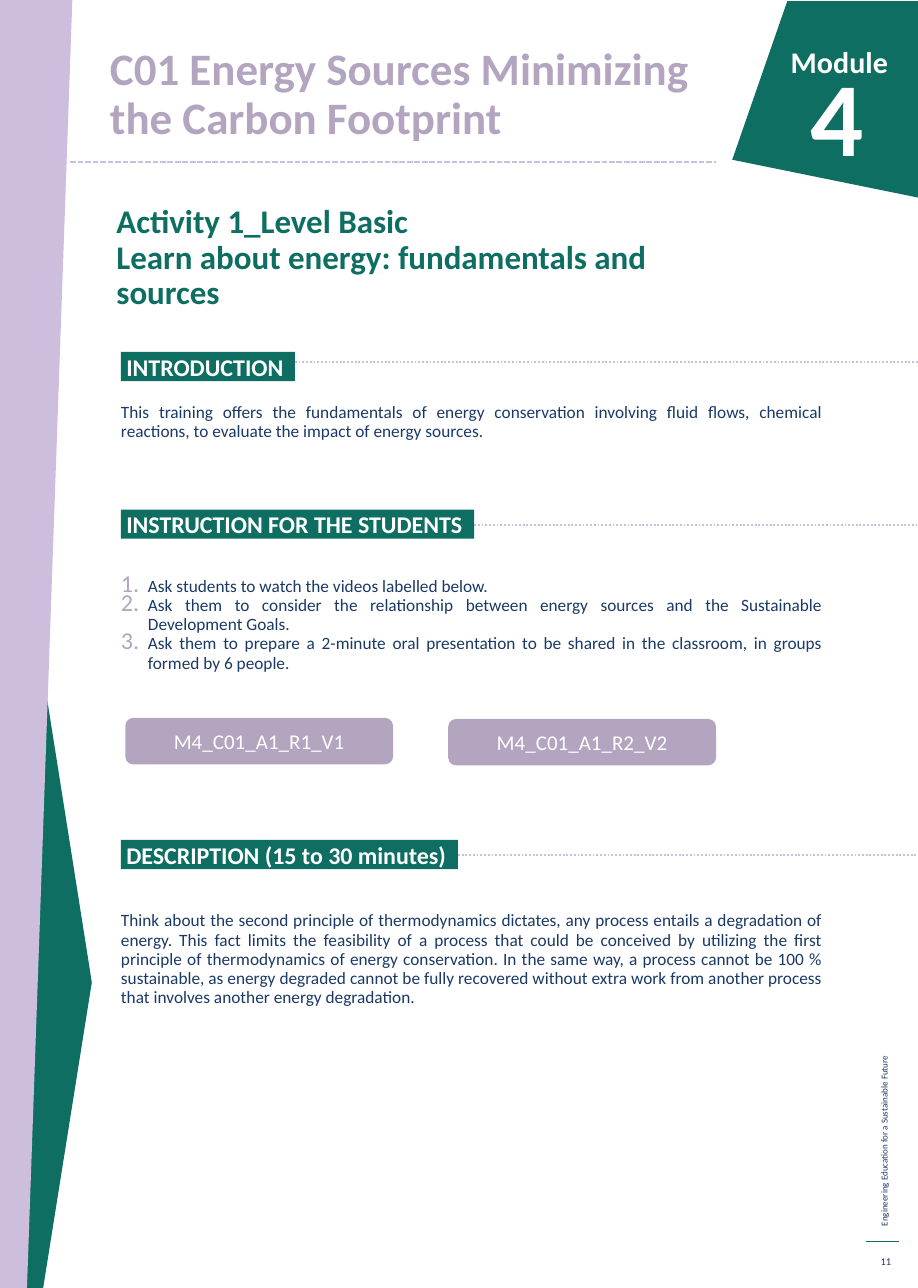
from lxml import etree
from pptx import Presentation
from pptx.dml.color import RGBColor
from pptx.enum import dml, shapes, text
from pptx.oxml import ns
from pptx.util import Inches, Pt

GREEN, LILAC, MAUVE, NAVY, WHITE = "0E6E61", "CEBEDD", "B3A5C0", "1A3966", "FFFFFF"
W, H = 8.5, 11.93
LEFT, BODY_W = 1.12, 6.49
JUSTIFY, RIGHT, CENTER = text.PP_ALIGN.JUSTIFY, text.PP_ALIGN.RIGHT, text.PP_ALIGN.CENTER
MIDDLE, BOTTOM = text.MSO_ANCHOR.MIDDLE, text.MSO_ANCHOR.BOTTOM


def rgb(color):
    return RGBColor.from_string(color)


def write(sp, lines, size, color, bold=False, align=None, spacing=None,
          anchor=text.MSO_ANCHOR.TOP, inset=(0.1, 0.05)):
    tf = sp.text_frame
    tf.word_wrap = True
    tf.vertical_anchor = anchor
    tf.margin_left = tf.margin_right = Inches(inset[0])
    tf.margin_top = tf.margin_bottom = Inches(inset[1])
    for i, line in enumerate(lines):
        p = tf.add_paragraph() if i else tf.paragraphs[0]
        p.alignment, p.line_spacing = align, spacing
        r = p.add_run()
        r.text = line
        r.font.name, r.font.size, r.font.bold = "Calibri", Pt(size), bold
        r.font.color.rgb = rgb(color)
    return sp


def text_box(slide, box, lines, size, color, **style):
    sp = slide.shapes.add_textbox(*map(Inches, box))
    return write(sp, lines, size, color, **style)


def paint(sp, color):
    sp.shadow.inherit = False
    sp.fill.solid()
    sp.fill.fore_color.rgb = rgb(color)
    sp.line.fill.background()
    return sp


def block(slide, kind, box, color):
    return paint(slide.shapes.add_shape(kind, *map(Inches, box)), color)


def polygon(slide, points, color):
    start, *rest = [(Inches(x), Inches(y)) for x, y in points]
    builder = slide.shapes.build_freeform(*start)
    builder.add_line_segments(rest, close=True)
    return paint(builder.convert_to_shape(), color)


def rule(slide, x1, x2, y, color, width, dash=None):
    line = slide.shapes.add_connector(shapes.MSO_CONNECTOR.STRAIGHT,
                                      *map(Inches, (x1, y, x2, y)))
    line.line.color.rgb = rgb(color)
    line.line.width = Pt(width)
    if dash:
        line.line.dash_style = dash
    etree.SubElement(line._element.spPr, ns.qn("a:effectLst"))


def number(p):
    """Turn a paragraph into an item of a numbered list."""
    pPr = p._p.get_or_add_pPr()
    pPr.set("marL", str(Inches(0.25)))
    pPr.set("indent", str(-Inches(0.25)))
    clr = etree.SubElement(pPr, ns.qn("a:buClr"))
    etree.SubElement(clr, ns.qn("a:srgbClr"), val=MAUVE)
    etree.SubElement(pPr, ns.qn("a:buSzPct"), val="140000")
    etree.SubElement(pPr, ns.qn("a:buAutoNum"), type="arabicPeriod")


def side_band(slide, x, y, h):
    polygon(slide, [(x + 0.4, y + h), (x + 0.23, y + h), (x + 0.23, y + 5.17),
                    (x + 0.83, y + 8.97), (x + 0.85, y + 9.1)], GREEN)
    polygon(slide, [(x, y), (x + 0.67, y), (x + 0.25, y + h), (x, y + h)], LILAC)


def header(slide, x, y):
    text_box(slide, (x + 0.27, y + 0.28, 5.99, 1.1),
             ["C01 Energy Sources Minimizing the Carbon Footprint"],
             30, MAUVE, bold=True, spacing=0.89, anchor=BOTTOM)
    rule(slide, x, x + 5.98, y + 1.5, LILAC, 1.25, dml.MSO_LINE.SQUARE_DOT)


def module_badge(slide, x, y):
    polygon(slide, [(W, y), (x + 0.51, y), (x, y + 1.47), (W, y + 1.82)], GREEN)
    for dx, dy, label, size in [(-0.26, 0.34, "Module", 20), (-0.48, 0.42, "4", 70)]:
        text_box(slide, (x + dx, y + dy, 1.8, 1.42), [label], size, WHITE,
                 bold=True, align=RIGHT)


def section(slide, box, title, rule_dy, body_dy, body, numbered=False):
    x, y, label_w, label_h = box
    # Label and dotted rule
    rule(slide, x + label_w, W, y + rule_dy, LILAC, 1.25, dml.MSO_LINE.ROUND_DOT)
    label = block(slide, shapes.MSO_SHAPE.RECTANGLE, box, GREEN)
    write(label, [title], 16, WHITE, bold=True, anchor=MIDDLE, inset=(0.05, 0),
          align=text.PP_ALIGN.LEFT)
    label.text_frame.word_wrap = False
    # Body text
    sp = text_box(slide, (x, y + body_dy, BODY_W, 0.18 * 5), body, 11.5, NAVY,
                  align=JUSTIFY, spacing=Pt(12.8), inset=(0, 0))
    if numbered:
        for p in sp.text_frame.paragraphs:
            number(p)


def video_buttons(slide, x, y, names):
    for i, name in enumerate(names):
        sp = block(slide, shapes.MSO_SHAPE.ROUNDED_RECTANGLE,
                   (x + 2.99 * i, y + 0.01 * i, 2.48, 0.43), MAUVE)
        write(sp, [name], 14, WHITE, align=CENTER, anchor=MIDDLE)


def footer(slide, x, y):
    sp = text_box(slide, (x - 2.08, y - 2.39, 4.49, 0.2),
                  ["Engineering Education for a Sustainable Future"], 6, NAVY)
    sp.rotation = 270
    rule(slide, x, x + 0.3, y, GREEN, 0.75)
    text_box(slide, (x, y + 0.04, 0.33, 0.29), ["11"], 7, NAVY,
             align=RIGHT, anchor=MIDDLE)


def activity_page(prs):
    slide = prs.slides.add_slide(prs.slide_layouts[6])
    side_band(slide, 0, 0, H)
    header(slide, 0.65, 0)
    module_badge(slide, 6.78, 0.01)
    text_box(slide, (0.98, 1.85, 5.54, 1.05),
             ["Activity 1_Level Basic", "Learn about energy: fundamentals and sources"],
             22, GREEN, bold=True, spacing=0.9)
    section(slide, (LEFT, 3.26, 1.61, 0.27), "INTRODUCTION", 0.09, 0.47, [
        "This training offers the fundamentals of energy conservation involving fluid "
        "flows, chemical reactions, to evaluate the impact of energy sources."])
    section(slide, (LEFT, 4.72, 3.27, 0.27), "INSTRUCTION FOR THE STUDENTS", 0.14, 0.62, [
        "Ask students to watch the videos labelled below.",
        "Ask them to consider the relationship between energy sources and the "
        "Sustainable Development Goals.",
        "Ask them to prepare a 2-minute oral presentation to be shared in the "
        "classroom, in groups formed by 6 people."], numbered=True)
    video_buttons(slide, 1.16, 6.65, ["M4_C01_A1_R1_V1", "M4_C01_A1_R2_V2"])
    section(slide, (LEFT, 7.78, 3.12, 0.27), "DESCRIPTION (15 to 30 minutes)", 0.14, 0.66, [
        "Think about the second principle of thermodynamics dictates, any process "
        "entails a degradation of energy. This fact limits the feasibility of a process "
        "that could be conceived by utilizing the first principle of thermodynamics of "
        "energy conservation. In the same way, a process cannot be 100 % sustainable, as "
        "energy degraded cannot be fully recovered without extra work from another "
        "process that involves another energy degradation."])
    footer(slide, 8.02, 11.5)


def main():
    prs = Presentation()
    prs.slide_width, prs.slide_height = Inches(W), Inches(H)
    activity_page(prs)
    prs.save("out.pptx")


if __name__ == "__main__":
    main()
